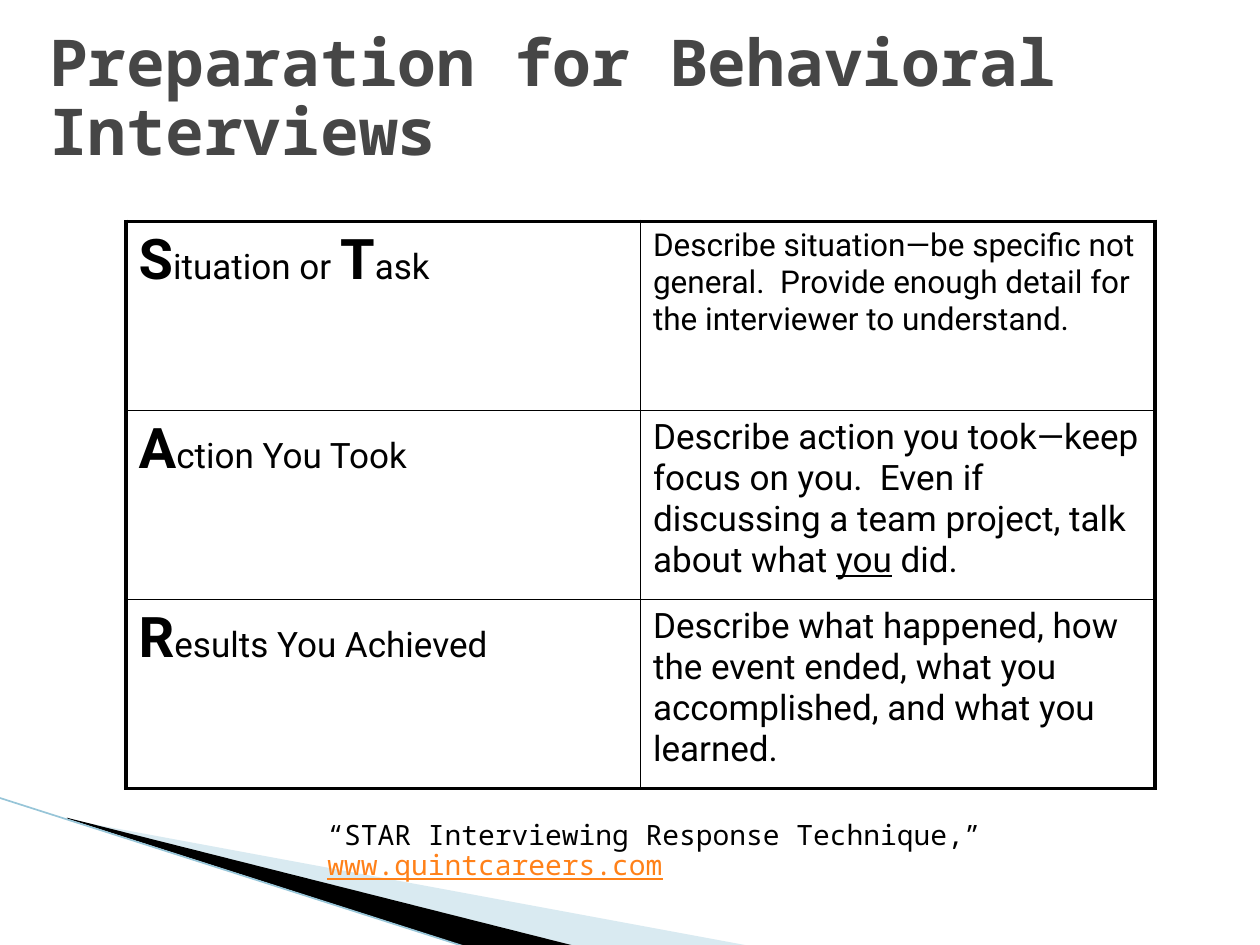
import pptx
import pptx.util
import pptx.dml.color
import pptx.enum.shapes
import pptx.enum.text
import pptx.oxml
import pptx.oxml.ns
from lxml import etree

Pt = pptx.util.Pt
qn = pptx.oxml.ns.qn

COLORS = {
    "title": "464646",
    "text": "000000",
    "link": "FF8119",
    "pale": "A0CBDC",
    "dark": "000000",
    "edge": "97C5D8",
}
MONO, SANS = "Noto Sans Mono", "Roboto"
BIG, MID, SMALL = 32, 20, 18
THICK, THIN = 2.25, 1


def rgb(name):
    return pptx.dml.color.RGBColor.from_string(COLORS[name])


class Deck:
    def __init__(self, wide, high):
        self.prs = pptx.Presentation()
        self.prs.slide_width, self.prs.slide_height = Pt(wide), Pt(high)
        self.slide = self.prs.slides.add_slide(self.prs.slide_layouts[5])
        self.shapes = self.slide.shapes

    def place(self, shape, box):
        shape.left, shape.top, shape.width, shape.height = map(Pt, box)

    def style(self, run, font, size, color="text", bold=False, under=False):
        run.font.name, run.font.size = font, Pt(size)
        run.font.bold, run.font.underline = bold, under
        run.font.color.rgb = rgb(color)

    def runs(self, para, font, parts):
        """Each part is (text, size, options for style)."""
        for text, size, opts in parts:
            run = para.add_run()
            run.text = text
            self.style(run, font, size, **opts)

    def title(self, text, box, size):
        shape = self.shapes.title
        self.place(shape, box)
        frame = shape.text_frame
        frame.text = text
        frame.word_wrap = True
        frame.auto_size = pptx.enum.text.MSO_AUTO_SIZE.NONE
        frame.vertical_anchor = pptx.enum.text.MSO_ANCHOR.MIDDLE
        para = frame.paragraphs[0]
        para.alignment = pptx.enum.text.PP_ALIGN.LEFT
        para.line_spacing = 0.89
        self.style(para.runs[0], MONO, size, "title", bold=True)

    def note(self, parts, box):
        frame = self.shapes.add_textbox(*map(Pt, box)).text_frame
        frame.word_wrap = True
        para = frame.paragraphs[0]
        para.line_spacing = 0.89
        self.runs(para, MONO, parts)

    def wedge(self, points, color, alpha=None):
        points = [(Pt(x), Pt(y)) for x, y in points]
        path = self.shapes.build_freeform(*points[0])
        path.add_line_segments(points[1:], close=True)
        shape = path.convert_to_shape()
        shape.shadow.inherit = False
        shape.fill.solid()
        shape.fill.fore_color.rgb = rgb(color)
        shape.line.fill.background()
        if alpha:
            tint = shape.fill._xPr.find(".//" + qn("a:srgbClr"))
            etree.SubElement(tint, qn("a:alpha"), val=str(alpha * 1000))

    def line(self, start, end, color, width):
        kind = pptx.enum.shapes.MSO_CONNECTOR.STRAIGHT
        line = self.shapes.add_connector(kind, *map(Pt, start + end))
        line.line.color.rgb = rgb(color)
        line.line.width = Pt(width)
        etree.SubElement(line._element.spPr, qn("a:effectLst"))

    def border(self, cell, side, width):
        edge = etree.SubElement(cell._tc.get_or_add_tcPr(), qn("a:ln" + side),
                                w=str(Pt(width)))
        fill = etree.SubElement(edge, qn("a:solidFill"))
        etree.SubElement(fill, qn("a:srgbClr"), val=COLORS["text"])

    def table(self, rows, box):
        high, wide = len(rows), len(rows[0])
        table = self.shapes.add_table(high, wide, *map(Pt, box)).table
        table.first_row = table.horz_banding = False
        for r, row in enumerate(rows):
            for c, parts in enumerate(row):
                cell = table.cell(r, c)
                self.runs(cell.text_frame.paragraphs[0], SANS, parts)
                outer = {"L": c == 0, "R": c == wide - 1,
                         "T": r == 0, "B": r == high - 1}
                for side, rim in outer.items():
                    self.border(cell, side, THICK if rim else THIN)
                cell.fill.background()


def lead(first, rest):
    return [(first, BIG, {"bold": True}), (rest, MID, {})]


def main():
    deck = Deck(720, 540)

    # Corner wedges
    deck.wedge([(39.6, 468.5), (428.4, 540.5), (328.3, 540.5), (39.6, 468)],
               "pale", 40)
    deck.wedge([(38.2, 467.3), (329, 540.7), (267.8, 541.4), (38.9, 468)],
               "dark")
    deck.line((-0.7, 455.8), (267.1, 541.4), "edge", 0.95)

    # Title
    deck.title("Preparation for Behavioral Interviews",
               (20.9, 12.2, 684, 90), 36.9)

    # STAR table
    rows = [
        [lead("S", "ituation or ") + lead("T", "ask"),
         [("Describe situation—be specific not general.  Provide enough "
           "detail for the interviewer to understand.", SMALL, {})]],
        [lead("A", "ction You Took"),
         [("Describe action you took—keep focus on you.  Even if discussing "
           "a team project, talk about what ", MID, {}),
          ("you", MID, {"under": True}), (" did.", MID, {})]],
        [lead("R", "esults You Achieved"),
         [("Describe what happened, how the event ended, what you "
           "accomplished, and what you learned.", MID, {})]],
    ]
    deck.table(rows, (72, 126.5, 588, 324))

    # Citation
    deck.note([("“STAR Interviewing Response Technique,” ", 16, {}),
               ("www.quintcareers.com", 16,
                {"color": "link", "under": True})],
              (180, 466, 569.5, 55.4))

    deck.prs.save("out.pptx")


if __name__ == "__main__":
    main()
